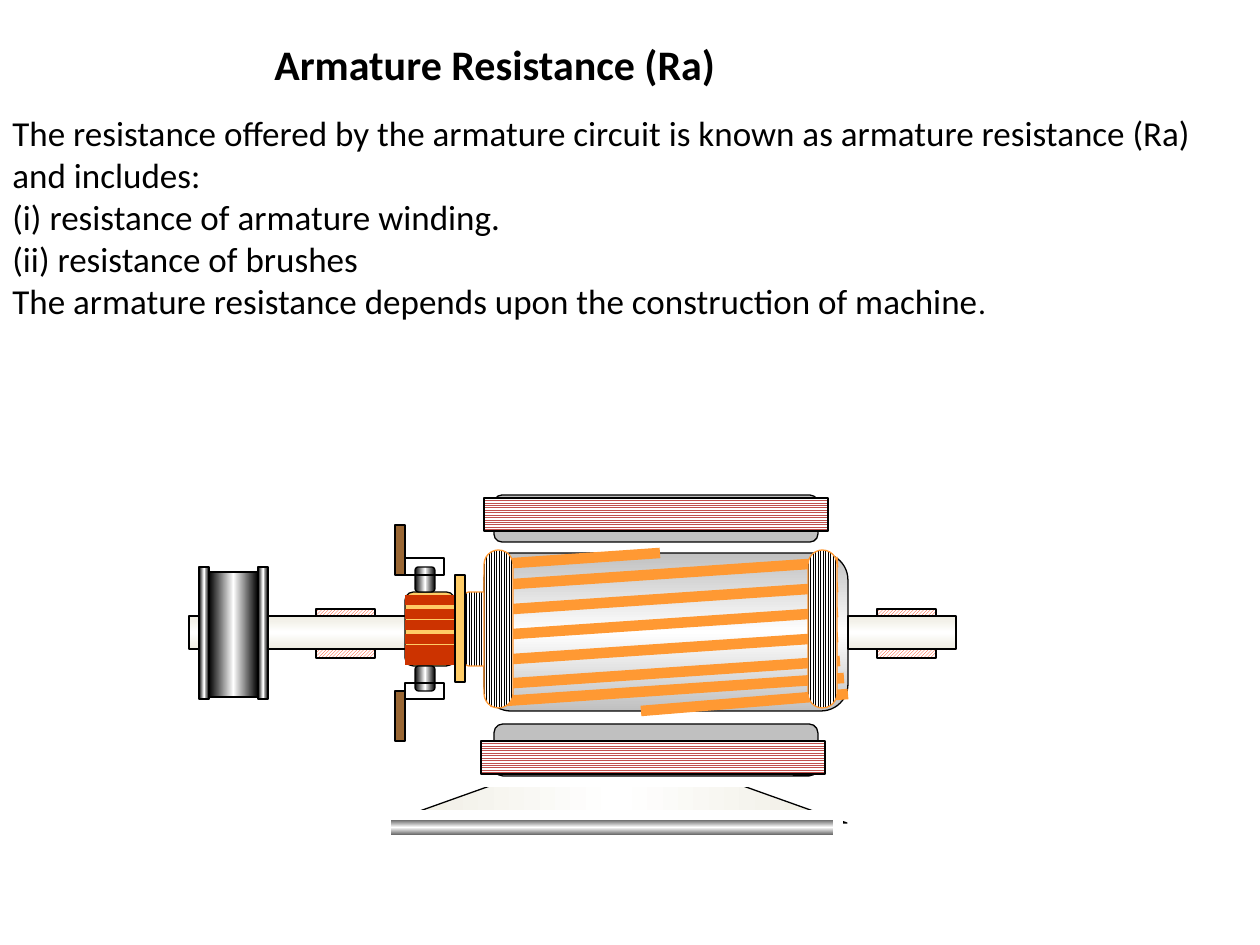
import copy
import pptx
import pptx.util
import pptx.dml.color
import pptx.enum.dml
import pptx.enum.shapes
import pptx.enum.text
import pptx.oxml

Shape = pptx.enum.shapes.MSO_SHAPE
Hatch = pptx.enum.dml.MSO_PATTERN
BOX, ROUND = Shape.RECTANGLE, Shape.ROUNDED_RECTANGLE

# Theme: colours, type sizes, line widths
THEME = {
    "ink": "000000", "white": "FFFFFF", "ivory": "EEECE1", "steel": "C0C0C0",
    "brass": "FFCC66", "copper": "FF9933", "red": "CC3300", "wood": "996633",
    "coil": "C0504D", "hatch": "FF3300",
    "font": "Calibri", "head": 24, "body": 20, "stop": 18,
    "thin": 0.75, "thick": 6,
}

# Text: each paragraph is a list of (words, size)
TITLE = [[("Armature Resistance (Ra)", "head")]]
BODY = [
    [("The resistance offered by the armature circuit is known as armature "
      "resistance (Ra) and includes:", "body")],
    [("(i) resistance of armature winding.", "body")],
    [("(ii) resistance of brushes", "body")],
    [("The armature resistance depends upon the construction of machine", "body"),
     (".", "stop")],
]
TEXTS = [((262, 32, 630, 64), TITLE, {"bold": True}),
         ((0, 105, 1260, 224), BODY, {"bold": None})]

# Fills: plain name, ("grad", edge, angle) or ("hatch", pattern, colour)
METAL, TUBE = ("grad", "ink", 0), ("grad", "ivory", 90)
WIRE = ("hatch", Hatch.NARROW_VERTICAL, "ink")
FIELD = ("hatch", Hatch.NARROW_HORIZONTAL, "coil")
SLANT = ("hatch", Hatch.DARK_UPWARD_DIAGONAL, "hatch")
EDGE = ("ink", "thin")
TRIM = ("copper", "thin")
FRAME = ("white", "thick")

# Stand: slope, plinth and frame rail
SLOPE = [(386, 823), (501, 782), (732, 782), (847, 823)]
PLINTH = [(BOX, (386, 815, 452, 25), ("grad", "ink", 90), FRAME, None)]
RAIL = [(455, 782, 789, 782)]

# Bearings: hatched block with the white gap for the shaft
BEARS = [part for block, gap in ((316, 287), (877, 857)) for part in (
    (BOX, (block, 609, 59, 49), SLANT, EDGE, None),
    (BOX, (gap, 616, 98, 33), "white", None, None))]

# Rotor core and its slanted winding
CORE = [(ROUND, (484, 553, 364, 158), ("grad", "steel", 90), EDGE, 0.17)]
WINDING = [(484, 586 + 25 * i, 838, 562 + 25 * i) for i in range(4)] + [
    (486, 685, 840, 661), (490, 702, 844, 678),
    (641, 711, 848, 694), (500, 564, 660, 553)]

# Shaft and commutator
SHAFT = [(BOX, (189, 616, 296, 33), TUBE, EDGE, None),
         (BOX, (848, 616, 108, 33), TUBE, EDGE, None),
         (ROUND, (405, 592, 50, 74), "brass", EDGE, 0.17)]
BARS = [(405, y, 455, y) for y in (600, 614, 625, 639, 650, 660)]

# Coil ends, brushes, poles and pulley
FRONT = [
    (ROUND, (464, 592, 29, 74), WIRE, TRIM, 0.17),
    (ROUND, (484, 550, 29, 158), WIRE, TRIM, 0.5),
    (ROUND, (808, 550, 29, 158), WIRE, TRIM, 0.5),
    (BOX, (455, 575, 10, 107), "brass", EDGE, None),
    (ROUND, (415, 666, 20, 25), METAL, EDGE, 0.17),
    (ROUND, (415, 567, 20, 25), METAL, EDGE, 0.17),
    (BOX, (395, 525, 10, 50), "wood", EDGE, None),
    (BOX, (405, 558, 39, 17), None, EDGE, None),
    (BOX, (395, 691, 10, 50), "wood", EDGE, None),
    (BOX, (405, 683, 39, 16), None, EDGE, None),
    (ROUND, (494, 495, 324, 47), "steel", EDGE, 0.17),
    (ROUND, (494, 724, 324, 52), "steel", EDGE, 0.17),
    (BOX, (481, 741, 344, 33), FIELD, EDGE, None),
    (BOX, (484, 498, 344, 33), FIELD, EDGE, None),
    (BOX, (209, 572, 49, 125), METAL, EDGE, None),
    (BOX, (258, 567, 10, 132), METAL, EDGE, None),
    (BOX, (199, 567, 10, 132), METAL, EDGE, None),
]


def px(n):
    return pptx.util.Emu(round(n * 914400 / 126))


def tint(name):
    return pptx.dml.color.RGBColor.from_string(THEME[name])


def put(obj, vals):
    for key, val in vals.items():
        setattr(obj, key, val)


def paint(fill, kind):
    if kind is None:
        fill.background()
    elif isinstance(kind, str):
        fill.solid()
        fill.fore_color.rgb = tint(kind)
    elif kind[0] == "hatch":
        fill.patterned()
        fill.pattern = kind[1]
        fill.fore_color.rgb, fill.back_color.rgb = tint(kind[2]), tint("white")
    else:
        fill.gradient()
        fill.gradient_angle = kind[2]
        # A third stop is copied from the last one
        last = fill.gradient_stops[1]._gs
        last.addnext(copy.deepcopy(last))
        for i, stop in enumerate(fill.gradient_stops):
            stop.position = i / 2
            stop.color.rgb = tint("white" if i == 1 else kind[1])


def draw(line, pen):
    if pen is None:
        line.fill.background()
    else:
        line.color.rgb = tint(pen[0])
        line.width = pptx.util.Pt(THEME[pen[1]])


def dress(shape, fill, pen):
    shape.shadow.inherit = False
    paint(shape.fill, fill)
    draw(shape.line, pen)


def parts(pool, rows):
    for form, place, fill, pen, bend in rows:
        shape = pool.add_shape(form, *map(px, place))
        if bend is not None:
            shape.adjustments[0] = bend
        dress(shape, fill, pen)


def lines(pool, rows, color):
    for ends in rows:
        wire = pool.add_connector(
            pptx.enum.shapes.MSO_CONNECTOR.STRAIGHT, *map(px, ends))
        draw(wire.line, (color, "thick"))
        pptx.oxml.xmlchemy.OxmlElement
        wire._element.spPr.append(pptx.oxml.parse_xml(
            '<a:effectLst xmlns:a='
            '"http://schemas.openxmlformats.org/drawingml/2006/main"/>'))


def write(pool, place, paras, look):
    frame = pool.add_textbox(*map(px, place)).text_frame
    put(frame, {"word_wrap": True,
                "auto_size": pptx.enum.text.MSO_AUTO_SIZE.SHAPE_TO_FIT_TEXT})
    for i, runs in enumerate(paras):
        para = frame.add_paragraph() if i else frame.paragraphs[0]
        for words, size in runs:
            run = para.add_run()
            run.text = words
            put(run.font, {"name": THEME["font"],
                           "size": pptx.util.Pt(THEME[size]), **look})
            run.font.color.rgb = tint("ink")


def main():
    deck = pptx.Presentation()
    put(deck, {"slide_width": px(1260), "slide_height": px(945)})
    pool = deck.slides.add_slide(deck.slide_layouts[6]).shapes
    for text in TEXTS:
        write(pool, *text)

    # Machine, from back to front
    motor = pool.add_group_shape().shapes
    pen = motor.build_freeform(*map(px, SLOPE[0]), scale=1.0)
    pen.add_line_segments([tuple(map(px, spot)) for spot in SLOPE[1:]])
    dress(pen.convert_to_shape(), ("grad", "ivory", 0), EDGE)
    parts(motor, PLINTH + BEARS)
    lines(motor, RAIL, "white")
    parts(motor, CORE)
    lines(motor, WINDING, "copper")
    parts(motor, SHAFT)
    lines(motor, BARS, "red")
    parts(motor, FRONT)
    deck.save("out.pptx")


if __name__ == "__main__":
    main()
